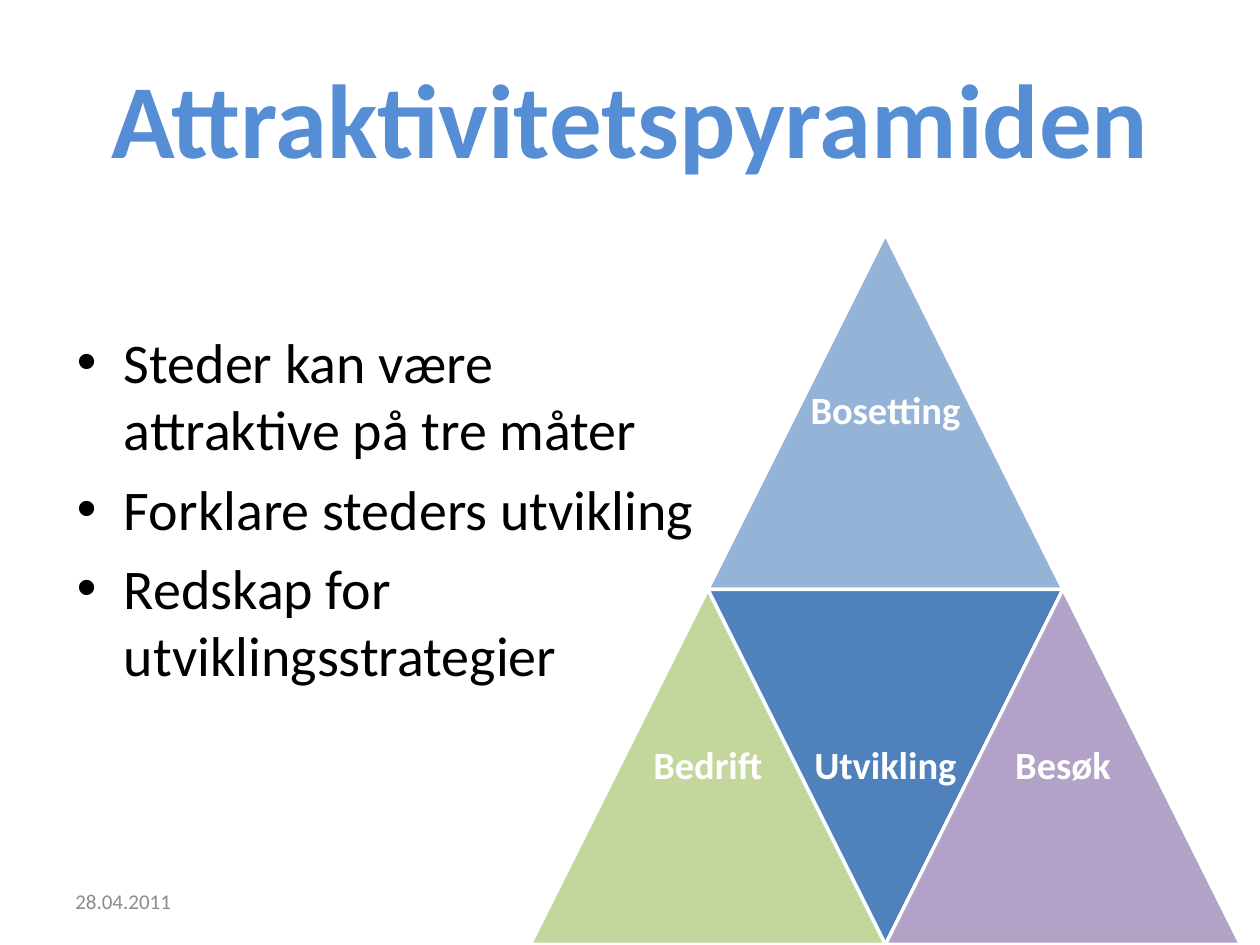
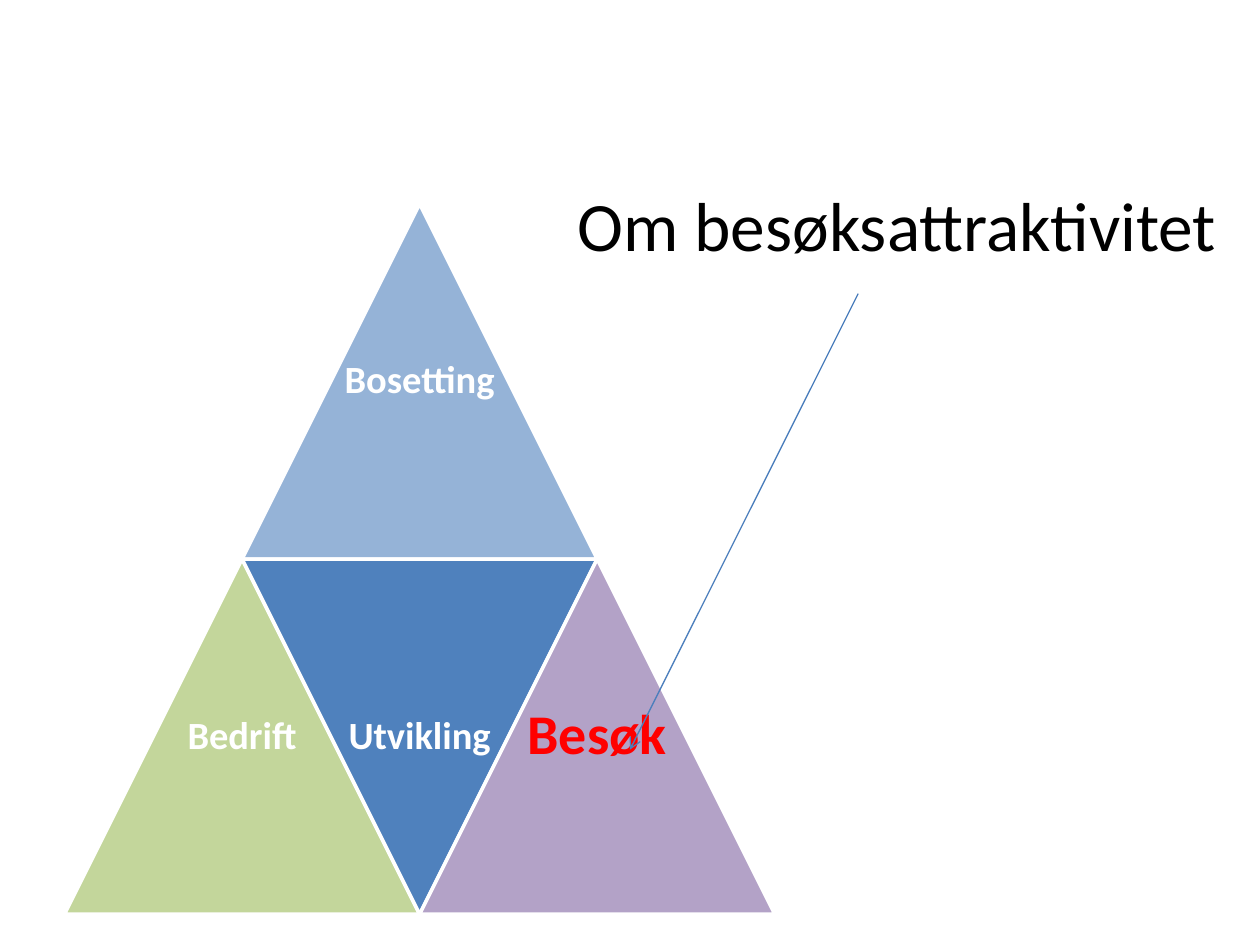
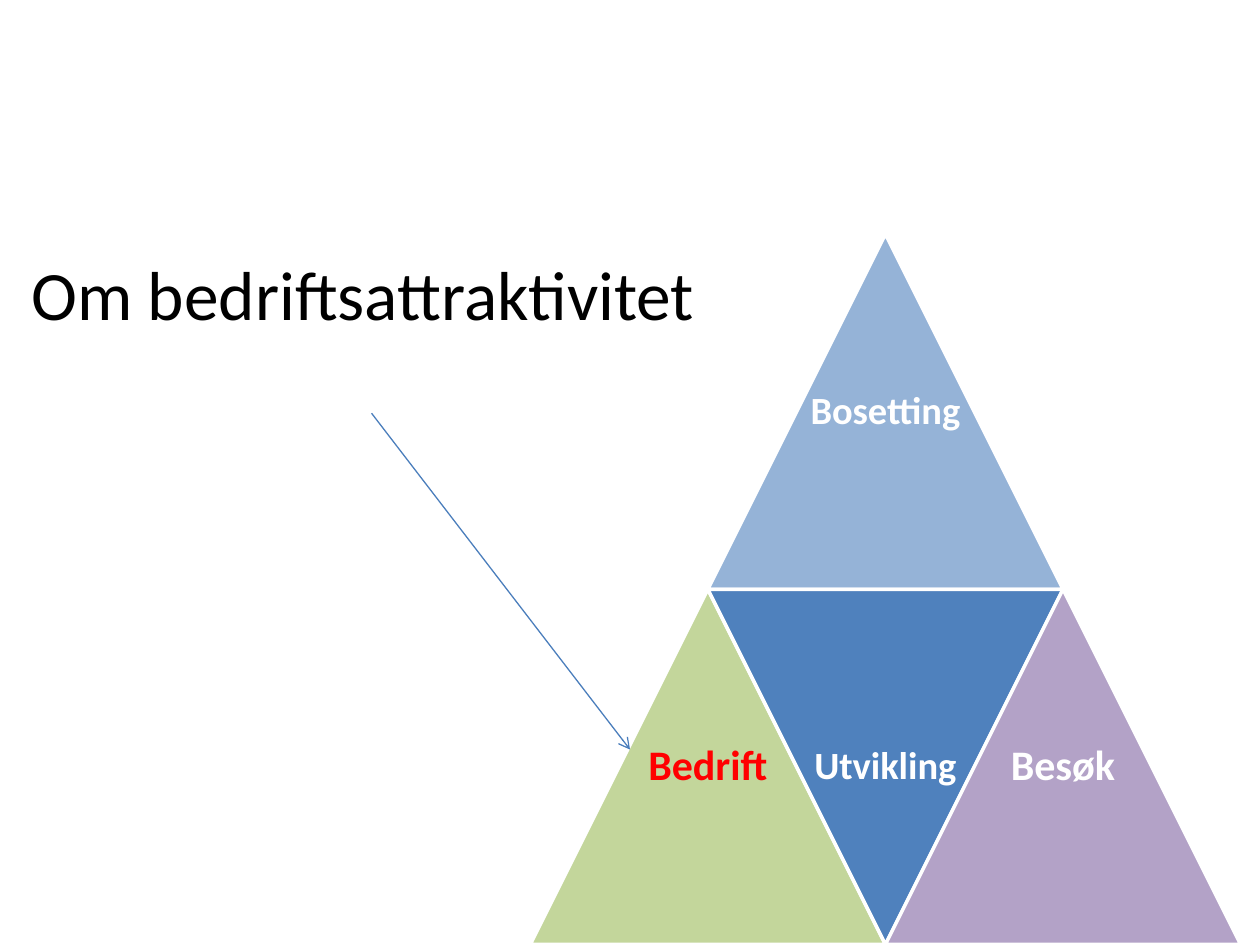
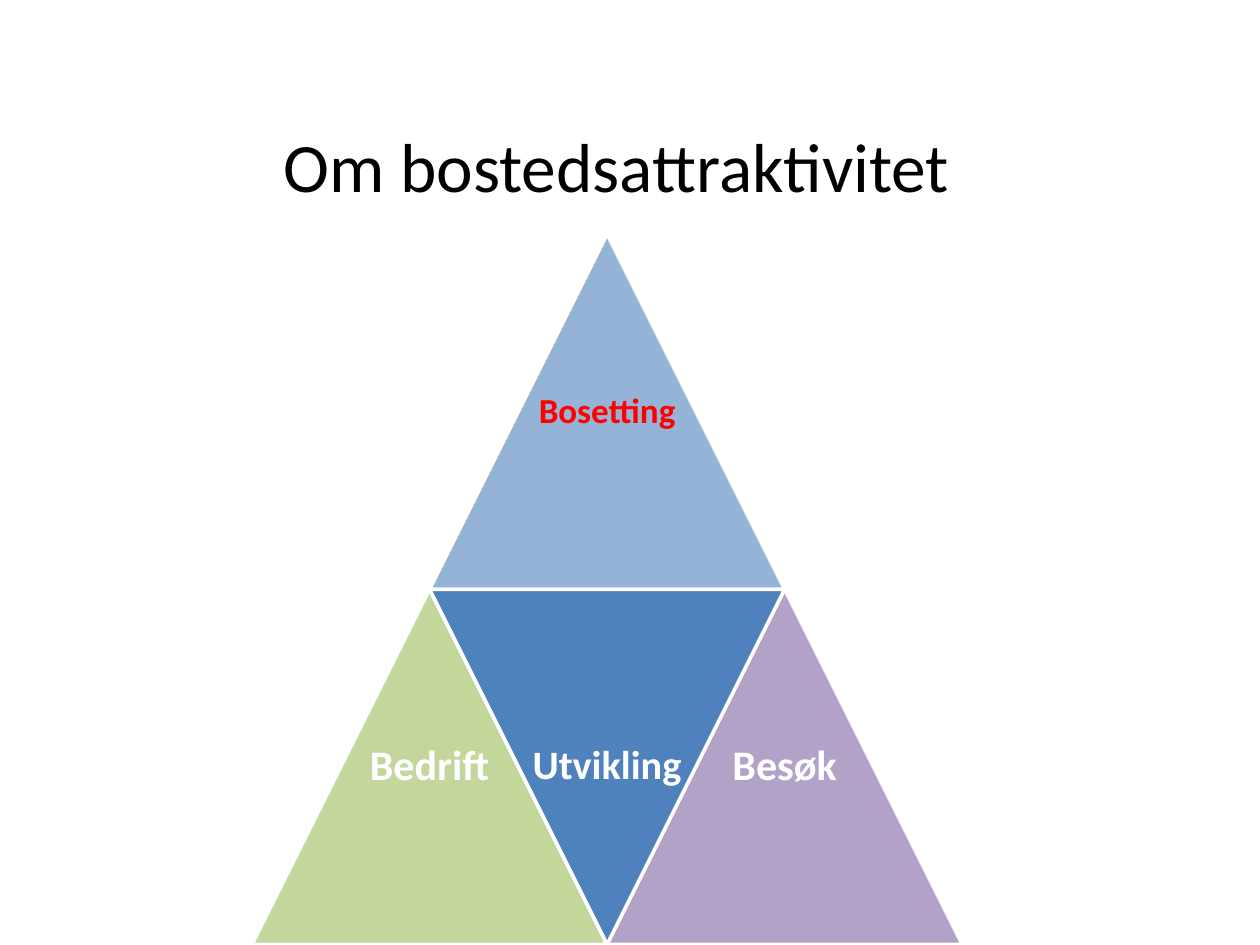
from pptx import Presentation
from pptx.dml.color import RGBColor
from pptx.enum.shapes import MSO_CONNECTOR as Connector, MSO_SHAPE as Shape
from pptx.enum.text import MSO_ANCHOR as Anchor, PP_ALIGN as Align
from pptx.oxml.ns import qn
from pptx.util import Cm, Pt
from lxml.etree import SubElement

COLORS = {
    "heading": "558ED5", "text": "000000", "date": "8C8C8C", "arrow": "4B7EBC",
    "label": "FFFFFF", "focus": "FF0000", "edge": "FFFFFF",
    "Bosetting": "95B3D7", "Bedrift": "C3D69B", "Utvikling": "4F81BD", "Besøk": "B3A2C7",
}
FONT = "Calibri"
SIDE = 7.16  # width and height of one triangle, cm

# Name: column in half sides, row in sides, rotation
TRIANGLES = {
    "Bosetting": (1, 0, 0),
    "Bedrift": (0, 1, 0),
    "Utvikling": (1, 1, 180),
    "Besøk": (2, 1, 0),
}

# One entry per slide; label sizes are 22 unless listed, lengths in cm
SLIDES = [
    {"title": "Attraktivitetspyramiden", "title_at": (1.27, 0.76, 22.86, 3.18),
     "title_size": 60, "title_color": "heading", "bold": True,
     "pyramid": (10.69, 4.72), "sizes": {}, "focus": None, "arrow": None},
    {"title": "Om besøksattraktivitet", "title_at": (10.77, 2.92, 14.63, 3.18),
     "pyramid": (1.3, 4.11), "sizes": {"Besøk": 32}, "focus": "Besøk",
     "arrow": (17.3, 5.92, 12.7, 15.11)},
    {"title": "Om bedriftsattraktivitet", "title_at": (0, 4.32, 14.63, 3.18),
     "pyramid": (10.69, 4.72), "sizes": {"Bedrift": 24, "Besøk": 24}, "focus": "Bedrift",
     "arrow": (7.49, 8.33, 12.7, 15.11)},
    {"title": "Om bostedsattraktivitet", "title_at": (5.11, 1.73, 14.63, 3.18),
     "pyramid": (5.08, 4.72), "focus": "Bosetting", "arrow": None,
     "sizes": {"Bosetting": 20, "Bedrift": 24, "Utvikling": 23, "Besøk": 24}},
]
BULLETS = [
    "Steder kan være attraktive på tre måter",
    "Forklare steders utvikling",
    "Redskap for utviklingsstrategier",
]


def rgb(name):
    return RGBColor.from_string(COLORS[name])


def add_text(shapes, place, lines, size, color, bold=False, align=Align.LEFT, anchor=Anchor.MIDDLE):
    box = shapes.add_textbox(*[Cm(length) for length in place])
    frame = box.text_frame
    frame.word_wrap = True
    frame.vertical_anchor = anchor
    frame.text = "\n".join(lines)
    for para in frame.paragraphs:
        para.alignment = align
        para.font.name = FONT
        para.font.size = Pt(size)
        para.font.bold = bold
        para.font.color.rgb = rgb(color)
    return frame


deck = Presentation()
deck.slide_width, deck.slide_height = Cm(25.4), Cm(19.05)

for content in SLIDES:
    page = deck.slides.add_slide(deck.slide_layouts[6])

    # Title
    add_text(page.shapes, content["title_at"], [content["title"]],
             content.get("title_size", 39.6), content.get("title_color", "text"),
             content.get("bold", False), Align.CENTER)

    # Pyramid of four triangles, each with its label on top
    pyramid = page.shapes.add_group_shape()
    left, top = content["pyramid"]
    for name, (column, row, rotation) in TRIANGLES.items():
        place = (left + column * SIDE / 2, top + row * SIDE, SIDE, SIDE)
        triangle = pyramid.shapes.add_shape(
            Shape.ISOSCELES_TRIANGLE, *[Cm(length) for length in place])
        triangle.rotation = rotation
        triangle.shadow.inherit = False
        triangle.fill.solid()
        triangle.fill.fore_color.rgb = rgb(name)
        triangle.line.color.rgb = rgb("edge")
        triangle.line.width = Pt(2)
        label = add_text(pyramid.shapes, place, [name], content["sizes"].get(name, 22),
                         "focus" if name == content["focus"] else "label", True, Align.CENTER)
        label.paragraphs[0].line_spacing = 0.9

    # Arrow from the title to the triangle in focus
    if content["arrow"]:
        arrow = page.shapes.add_connector(
            Connector.STRAIGHT, *[Cm(length) for length in content["arrow"]])
        arrow.line.color.rgb = rgb("arrow")
        arrow.line.width = Pt(0.75)
        SubElement(arrow.line._get_or_add_ln(), qn("a:tailEnd"), type="arrow")
        SubElement(arrow._element.spPr, qn("a:effectLst"))

# Bullets and date on the first slide
first = deck.slides[0]
body = add_text(first.shapes, (1.3, 6.48, 13.23, 12.57), BULLETS, 32, "text", anchor=Anchor.TOP)
for para in body.paragraphs:
    para.space_before = Pt(7)
    properties = para._p.get_or_add_pPr()
    properties.set("marL", str(Cm(0.95)))
    properties.set("indent", str(-Cm(0.95)))
    bullet_font = SubElement(properties, qn("a:buFont"), typeface="Arial")
    bullet = SubElement(properties, qn("a:buChar"), char="•")
    # The schema puts bullets before the default run properties
    defaults = properties.find(qn("a:defRPr"))
    defaults.addprevious(bullet_font)
    defaults.addprevious(bullet)
add_text(first.shapes, (1.27, 17.65, 5.92, 1.02), ["28.04.2011"], 12, "date")

deck.save("out.pptx")
